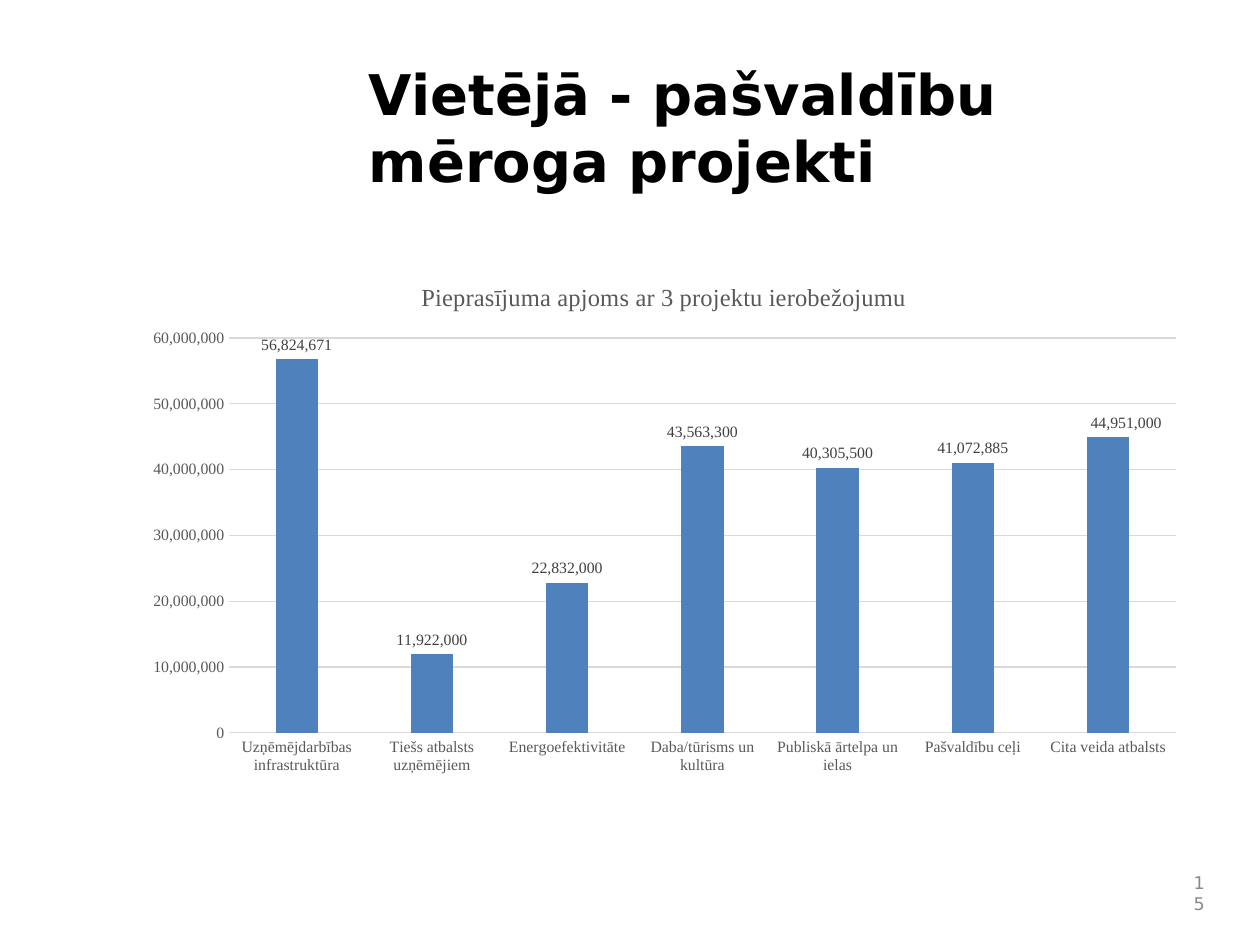
from dataclasses import dataclass

from lxml import etree
from pptx import Presentation
from pptx.chart import data as chart_data
from pptx.dml.color import RGBColor
from pptx.enum import chart as chart_enum, text
from pptx.oxml.ns import qn
from pptx.util import Inches, Pt

SANS, SERIF = "DejaVu Sans", "Times New Roman"
GREY, GRID = "595959", "D9D9D9"
NUMBER_FORMAT = "#,##0"
LABEL_ABOVE = chart_enum.XL_LABEL_POSITION.OUTSIDE_END
REQUESTED = {
    "Uzņēmējdarbības infrastruktūra": 56824671,
    "Tiešs atbalsts uzņēmējiem": 11922000,
    "Energoefektivitāte": 22832000,
    "Daba/tūrisms un kultūra": 43563300,
    "Publiskā ārtelpa un ielas": 40305500,
    "Pašvaldību ceļi": 41072885,
    "Cita veida atbalsts": 44951000,
}


@dataclass
class TextBlock:
    content: str
    box: tuple[float, float, float, float]
    size: int
    color: str
    bold: bool
    align: text.PP_ALIGN
    anchor: text.MSO_ANCHOR


TEXT_BLOCKS = [
    TextBlock("Vietējā - pašvaldību mēroga projekti", (2.83, 0.42, 6.67, 1.13),
              32, "000000", True, text.PP_ALIGN.LEFT, text.MSO_ANCHOR.TOP),
    TextBlock("15", (9.33, 6.92, 0.33, 0.33),
              10, "898989", False, text.PP_ALIGN.RIGHT, text.MSO_ANCHOR.MIDDLE),
]


def rgb(color: str) -> RGBColor:
    return RGBColor.from_string(color)


def set_font(font, name: str, size: int, color: str, bold: bool = False) -> None:
    for attribute, value in {"name": name, "size": Pt(size), "bold": bold}.items():
        setattr(font, attribute, value)
    font.color.rgb = rgb(color)


def set_line(line, color: str) -> None:
    line.color.rgb = rgb(color)
    line.width = Pt(0.75)


def add_text(slide, block: TextBlock) -> None:
    frame = slide.shapes.add_textbox(*map(Inches, block.box)).text_frame
    frame.word_wrap = True
    frame.vertical_anchor = block.anchor
    paragraph = frame.paragraphs[0]
    paragraph.alignment = block.align
    run = paragraph.add_run()
    run.text = block.content
    set_font(run.font, SANS, block.size, block.color, block.bold)


def manual_layout(**settings) -> etree._Element:
    """Build a c:layout element from its settings in schema order."""
    layout = etree.Element(qn("c:layout"))
    manual = etree.SubElement(layout, qn("c:manualLayout"))
    for tag, value in settings.items():
        etree.SubElement(manual, qn(f"c:{tag}")).set("val", str(value))
    return layout


def style_axes(chart) -> None:
    for axis in (chart.category_axis, chart.value_axis):
        axis.major_tick_mark = axis.minor_tick_mark = chart_enum.XL_TICK_MARK.NONE
        set_font(axis.tick_labels.font, SERIF, 9, GREY)
    set_line(chart.category_axis.format.line, GRID)
    values = chart.value_axis
    values.format.line.fill.background()
    set_line(values.major_gridlines.format.line, GRID)
    values.minimum_scale, values.maximum_scale = 0, 60_000_000
    values.major_unit = 10_000_000
    values.tick_labels.number_format = NUMBER_FORMAT
    values.tick_labels.number_format_is_linked = False


def style_columns(plot) -> None:
    for attribute, value in {"gap_width": 219, "overlap": -27,
                             "vary_by_categories": False}.items():
        setattr(plot, attribute, value)
    series = plot.series[0]
    series.format.fill.solid()
    series.format.fill.fore_color.rgb = rgb("4F81BD")
    labels = series.data_labels
    for attribute, value in {"show_value": True, "position": LABEL_ABOVE,
                             "number_format": NUMBER_FORMAT,
                             "number_format_is_linked": False}.items():
        setattr(labels, attribute, value)
    set_font(labels.font, SERIF, 9, "404040")

    last_label = series.points[len(REQUESTED) - 1].data_label
    last_label.position = LABEL_ABOVE
    set_font(last_label.font, SERIF, 9, "404040")
    index = labels._element.find(qn("c:dLbl")).find(qn("c:idx"))
    index.addnext(manual_layout(x=0.017, y=0))


def add_requested_chart(slide) -> None:
    data = chart_data.CategoryChartData(number_format=NUMBER_FORMAT)
    data.categories = list(REQUESTED)
    data.add_series("Series 1", list(REQUESTED.values()))
    box = map(Inches, (1.04, 2.06, 8.46, 4.18))
    chart = slide.shapes.add_chart(
        chart_enum.XL_CHART_TYPE.COLUMN_CLUSTERED, *box, data).chart
    set_font(chart.font, SERIF, 10, "000000")
    chart.has_legend = False
    title = chart.chart_title.text_frame
    title.text = "Pieprasījuma apjoms ar 3 projektu ierobežojumu"
    set_font(title.paragraphs[0].runs[0].font, SERIF, 14, GREY)
    chart.chart_title.include_in_layout = False
    style_axes(chart)
    style_columns(chart.plots[0])

    plot_area = chart._chartSpace.chart.plotArea
    for layout in plot_area.findall(qn("c:layout")):
        plot_area.remove(layout)
    plot_area.insert(0, manual_layout(
        layoutTarget="inner", xMode="edge", yMode="edge",
        x=0.092, y=0.149, w=0.888, h=0.75))


def main() -> None:
    deck = Presentation()
    deck.slide_width, deck.slide_height = Inches(10), Inches(7.5)
    slide = deck.slides.add_slide(deck.slide_layouts[6])
    for block in TEXT_BLOCKS:
        add_text(slide, block)
    add_requested_chart(slide)
    deck.save("out.pptx")


if __name__ == "__main__":
    main()
